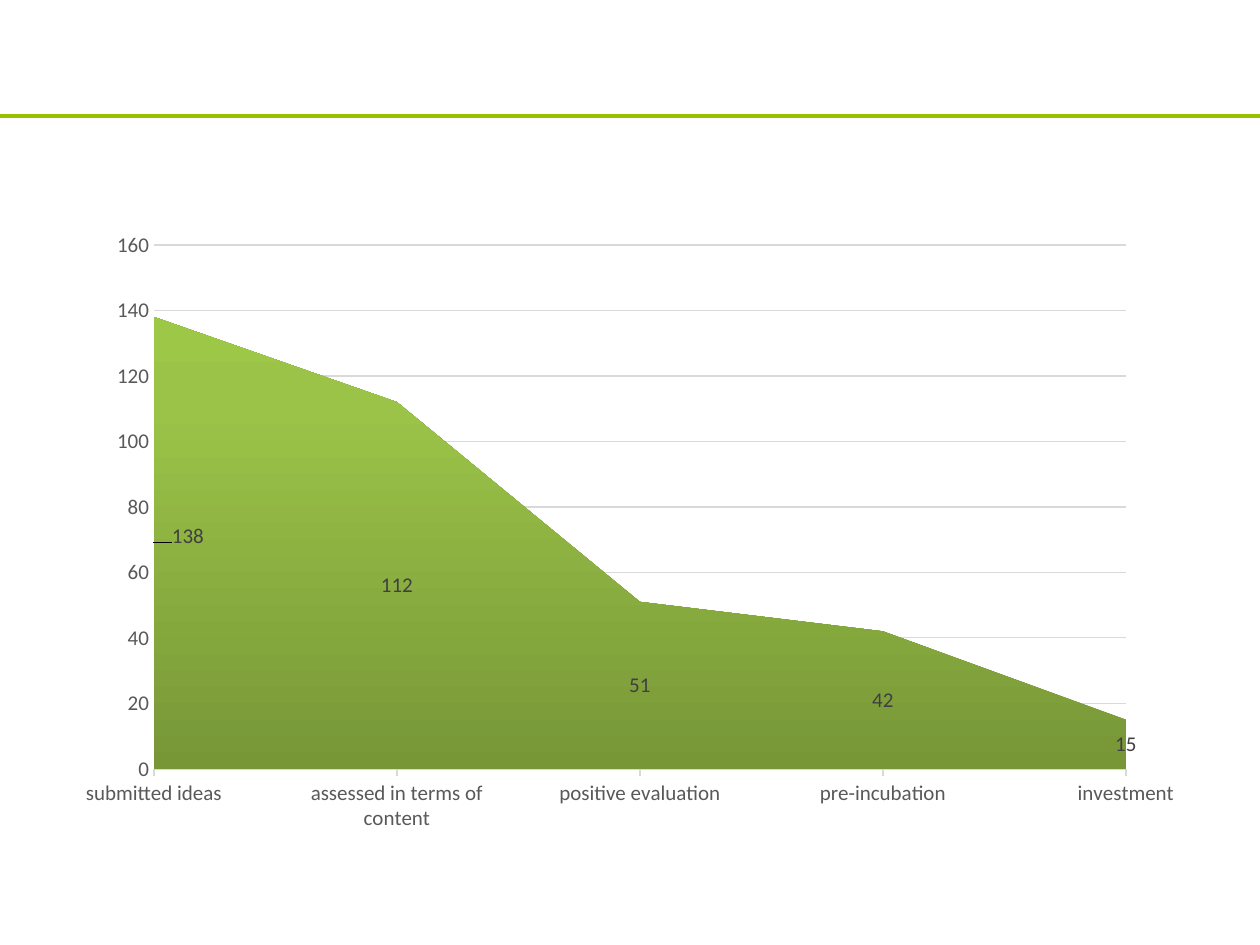
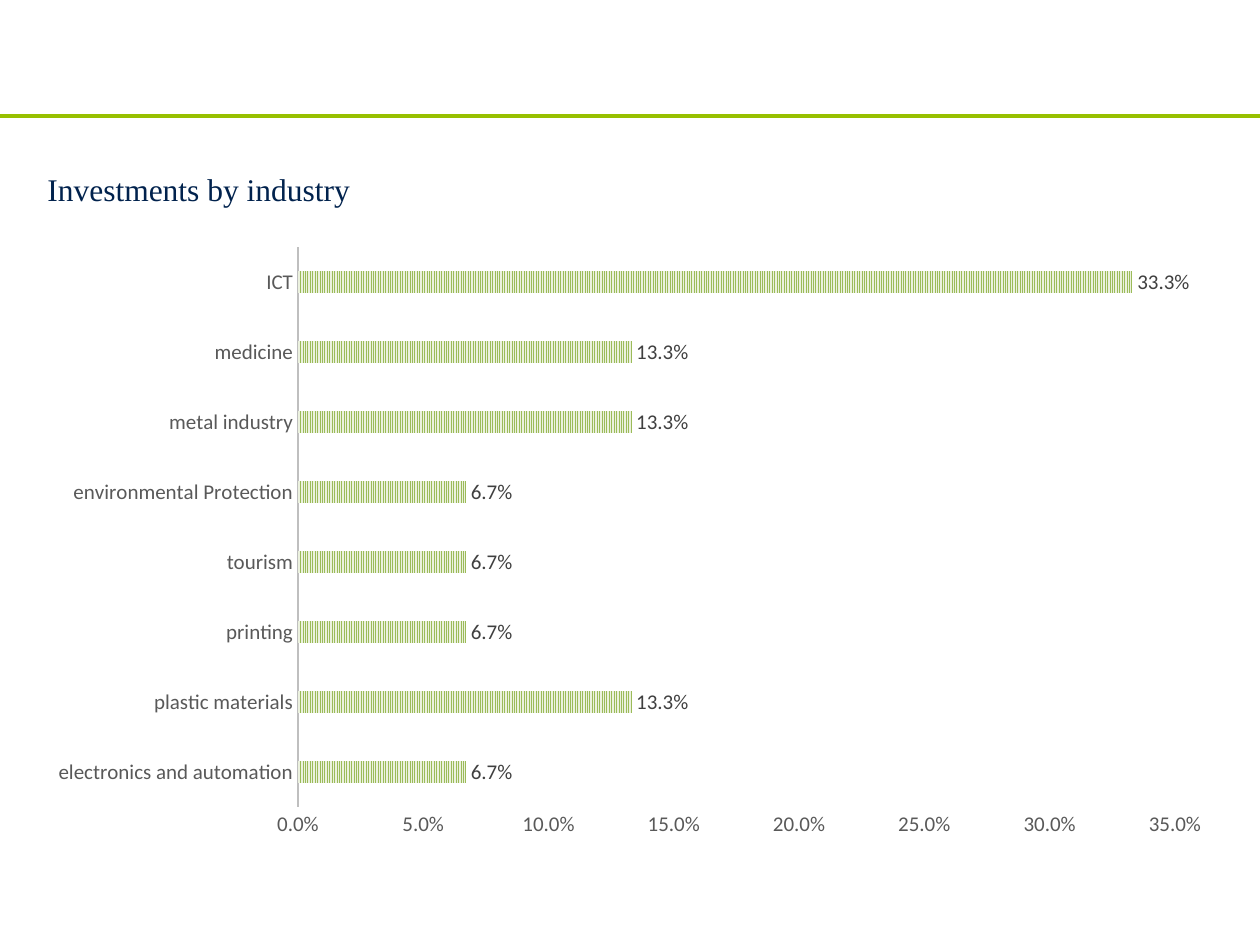
from lxml import etree
from pptx import Presentation
from pptx.chart.data import CategoryChartData
from pptx.dml.color import RGBColor
from pptx.enum.chart import XL_CHART_TYPE, XL_LABEL_POSITION, XL_TICK_MARK
from pptx.enum.dml import MSO_PATTERN
from pptx.enum.shapes import MSO_CONNECTOR
from pptx.enum.text import MSO_AUTO_SIZE
from pptx.oxml import parse_xml
from pptx.oxml.ns import nsdecls, qn
from pptx.util import Pt

AREA = XL_CHART_TYPE.AREA
BARS = XL_CHART_TYPE.BAR_CLUSTERED
OUTSIDE_END = XL_LABEL_POSITION.OUTSIDE_END
TICK_NONE = XL_TICK_MARK.NONE
TICK_OUT = XL_TICK_MARK.OUTSIDE
NARROW_VERTICAL = MSO_PATTERN.NARROW_VERTICAL
STRAIGHT = MSO_CONNECTOR.STRAIGHT
FIT_TEXT = MSO_AUTO_SIZE.SHAPE_TO_FIT_TEXT

PX_PER_INCH = 126
SLIDE_WIDTH, SLIDE_HEIGHT = 1260, 945
RULE_Y = 116
CHART_FONT = "Calibri"
HEADING_FONT = "Times New Roman"
COLORS = {
    "rule": "97C000",
    "heading": "01224D",
    "chart_text": "000000",
    "axis_text": "595959",
    "label_text": "404040",
    "grid": "D9D9D9",
    "bar_axis": "BFBFBF",
    "bar": "9BBB59",
    "bar_back": "EBF1DE",
    "area_low": "779737",
    "area_mid": "9BC348",
    "area_high": "9DC746",
}
AREA_STOPS = [(0, "area_low"), (80, "area_mid"), (100, "area_high")]
PIPELINE = {
    "submitted ideas": 138,
    "assessed in terms of content": 112,
    "positive evaluation": 51,
    "pre-incubation": 42,
    "investment": 15,
}
INDUSTRIES = {
    "electronics and automation": 0.067,
    "plastic materials": 0.133,
    "printing": 0.067,
    "tourism": 0.067,
    "environmental Protection": 0.067,
    "metal industry": 0.133,
    "medicine": 0.133,
    "ICT": 0.333,
}


def px(length):
    return round(length * 914400 / PX_PER_INCH)


def rgb(name):
    return RGBColor.from_string(COLORS[name])


def style_font(font, size, color, face=CHART_FONT):
    font.size = Pt(size)
    font.name = face
    font.color.rgb = rgb(color)


def style_line(line, color, width):
    line.color.rgb = rgb(color)
    line.width = Pt(width)


def add_ruled_slide(prs):
    slide = prs.slides.add_slide(prs.slide_layouts[6])
    rule = slide.shapes.add_connector(
        STRAIGHT, 0, px(RULE_Y), px(SLIDE_WIDTH), px(RULE_Y))
    style_line(rule.line, "rule", 2.75)
    etree.SubElement(rule._element.spPr, qn("a:effectLst"))
    return slide


def add_text(slide, text, box, *, size, color, face, spacing):
    frame = slide.shapes.add_textbox(*map(px, box)).text_frame
    frame.word_wrap = True
    frame.auto_size = FIT_TEXT
    paragraph = frame.paragraphs[0]
    paragraph.line_spacing = spacing
    run = paragraph.add_run()
    run.text = text
    style_font(run.font, size, color, face)


def manual_layout(x, y, width=None, height=None):
    parts = {"x": x, "y": y}
    modes = ""
    if width is not None:
        parts.update(w=width, h=height)
        modes = ('<c:layoutTarget val="inner"/>'
                 '<c:xMode val="edge"/><c:yMode val="edge"/>')
    values = "".join(f'<c:{tag} val="{value:.4f}"/>' for tag, value in parts.items())
    return parse_xml(f'<c:layout {nsdecls("c")}><c:manualLayout>{modes}{values}'
                     '</c:manualLayout></c:layout>')


def place_plot(chart, box, plot_box):
    left, top, width, height = box
    x, y, plot_width, plot_height = plot_box
    plot_area = chart._chartSpace.chart.plotArea
    for layout in plot_area.findall(qn("c:layout")):
        plot_area.remove(layout)
    plot_area.insert(0, manual_layout(
        (x - left) / width, (y - top) / height,
        plot_width / width, plot_height / height))


def add_chart(slide, kind, values, box, plot_box, *, number_format,
              maximum, step, axis_color, axis_width, tick):
    data = CategoryChartData(number_format=number_format)
    data.categories = list(values)
    data.add_series("Series 1", list(values.values()))
    chart = slide.shapes.add_chart(kind, *map(px, box), data).chart
    chart.has_legend = False
    chart.has_title = False
    style_font(chart.font, 10, "chart_text")
    place_plot(chart, box, plot_box)

    for axis in (chart.category_axis, chart.value_axis):
        axis.minor_tick_mark = TICK_NONE
        style_font(axis.tick_labels.font, 12, "axis_text")
    chart.category_axis.major_tick_mark = tick
    style_line(chart.category_axis.format.line, axis_color, axis_width)

    scale = chart.value_axis
    scale.major_tick_mark = TICK_NONE
    scale.minimum_scale, scale.maximum_scale = 0, maximum
    scale.major_unit = step
    scale.format.line.fill.background()
    scale.tick_labels.number_format = number_format
    scale.tick_labels.number_format_is_linked = False

    labels = chart.plots[0].series[0].data_labels
    labels.show_value = True
    labels.number_format = number_format
    labels.number_format_is_linked = False
    style_font(labels.font, 12, "label_text")
    return chart


def fill_gradient(series, stops):
    properties = series.format.fill._xPr
    marks = "".join(
        f'<a:gs pos="{position * 1000}"><a:srgbClr val="{COLORS[color]}"/></a:gs>'
        for position, color in stops)
    properties.insert(0, parse_xml(
        f'<a:gradFill {nsdecls("a")} rotWithShape="1"><a:gsLst>{marks}</a:gsLst>'
        '<a:lin ang="16200000" scaled="0"/></a:gradFill>'))


def nudge_label(series, index, x, y):
    style_font(series.points[index].data_label.font, 12, "label_text")
    label = series._element.find(f'{qn("c:dLbls")}/{qn("c:dLbl")}')
    label.insert(1, manual_layout(x, y))


def build_pipeline(prs):
    slide = add_ruled_slide(prs)
    chart = add_chart(
        slide, AREA, PIPELINE, (63, 220, 1134, 624), (154, 245, 972, 524),
        number_format="General", maximum=160, step=20,
        axis_color="grid", axis_width=1, tick=TICK_OUT)
    chart.value_axis.has_major_gridlines = True
    style_line(chart.value_axis.major_gridlines.format.line, "grid", 0.75)
    chart.value_axis._element.find(qn("c:crossBetween")).set("val", "midCat")
    ideas = chart.plots[0].series[0]
    fill_gradient(ideas, AREA_STOPS)
    nudge_label(ideas, 0, 0.03, -0.01)


def build_industries(prs):
    slide = add_ruled_slide(prs)
    add_text(slide, "Investments by industry", (35, 145, 1191, 71),
             size=18, color="heading", face=HEADING_FONT, spacing=1.5)
    chart = add_chart(
        slide, BARS, INDUSTRIES, (35, 234, 1191, 615), (298, 247, 877, 560),
        number_format="0.0%", maximum=0.35, step=0.05,
        axis_color="bar_axis", axis_width=1.5, tick=TICK_NONE)
    chart.value_axis.has_major_gridlines = False
    plot = chart.plots[0]
    plot.vary_by_categories = False
    plot.gap_width, plot.overlap = 227, -48
    shares = plot.series[0]
    shares.data_labels.position = OUTSIDE_END
    fill = shares.format.fill
    fill.patterned()
    fill.pattern = NARROW_VERTICAL
    fill.fore_color.rgb = rgb("bar")
    fill.back_color.rgb = rgb("bar_back")


def main():
    prs = Presentation()
    prs.slide_width, prs.slide_height = px(SLIDE_WIDTH), px(SLIDE_HEIGHT)
    build_pipeline(prs)
    build_industries(prs)
    prs.save("out.pptx")


if __name__ == "__main__":
    main()
